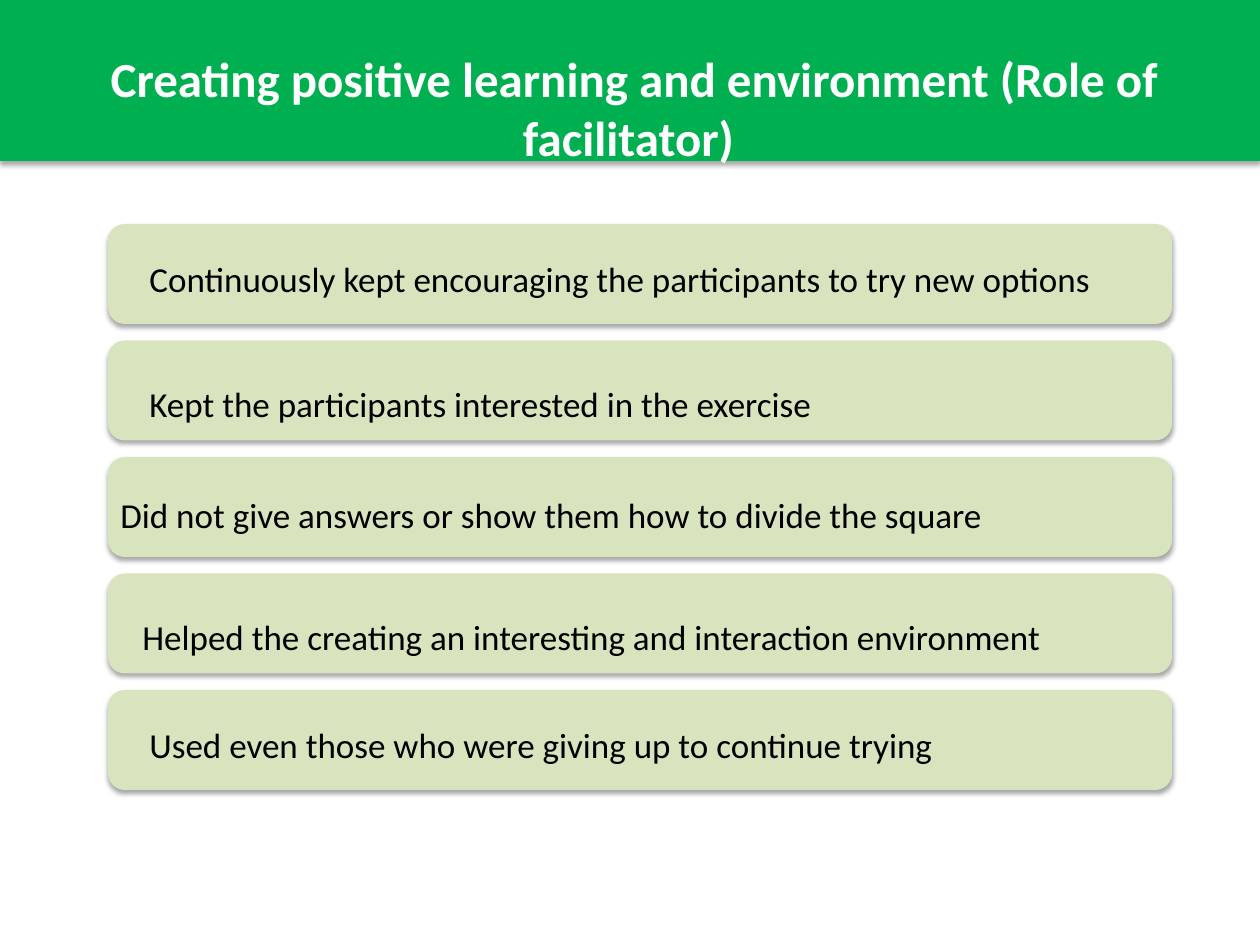
from dataclasses import dataclass

from lxml.etree import SubElement
from pptx import Presentation
from pptx.dml.color import RGBColor
from pptx.enum.shapes import MSO_SHAPE as Shape
from pptx.enum.text import MSO_ANCHOR as Anchor, MSO_AUTO_SIZE as AutoSize, PP_ALIGN as Align
from pptx.oxml.ns import qn
from pptx.util import Emu, Pt

TITLE = "Creating positive learning and environment (Role of facilitator) "
# wording, then left, top, width, height of its text in px, and line spacing
ROLES = [
    ("Continuously kept encouraging the participants to try new options",
     (137, 251, 1000, 55), 1.0),
    ("Kept the participants interested in the exercise", (137, 334, 919, 97), 2.0),
    ("Did not give answers or show them how to divide the square", (108, 445, 917, 97), 2.0),
    ("Helped the creating an interesting and interaction environment",
     (130, 567, 969, 97), 2.0),
    ("Used even those who were giving up to continue trying", (137, 675, 919, 97), 2.0),
]

SLIDE_W, SLIDE_H = 1260, 945
HEADER_H = 161
TITLE_BOX = (4, 42, SLIDE_W, 131)
BAR_LEFT, BAR_W, BAR_H = 108, 1064, 100
FIRST_BAR, LAST_BAR = 224, 690


@dataclass(frozen=True)
class Theme:
    header: RGBColor = RGBColor(0x00, 0xB0, 0x50)
    bar: RGBColor = RGBColor(0xD7, 0xE4, 0xBD)
    title: RGBColor = RGBColor(0xFF, 0xFF, 0xFF)
    text: RGBColor = RGBColor(0x00, 0x00, 0x00)
    font: str = "Calibri"
    title_size: Pt = Pt(28)
    text_size: Pt = Pt(20)


THEME = Theme()


def px(*lengths):
    return [Emu(round(length * 914400 / 126)) for length in lengths]


def add_soft_shadow(shape):
    shape.shadow.inherit = False
    effects = shape.element.spPr.find(qn("a:effectLst"))
    shadow = SubElement(effects, qn("a:outerShdw"), blurRad=str(Pt(3.1)),
                        dist=str(Pt(1.8)), dir="5400000", rotWithShape="0")
    black = SubElement(shadow, qn("a:srgbClr"), val="000000")
    SubElement(black, qn("a:alpha"), val="35000")


def add_panel(slide, kind, box, color):
    panel = slide.shapes.add_shape(kind, *px(*box))
    panel.fill.solid()
    panel.fill.fore_color.rgb = color
    panel.line.fill.background()
    add_soft_shadow(panel)
    return panel


def write(shape, wording, size, color, bold=False, align=Align.LEFT, spacing=1.0):
    frame = shape.text_frame
    frame.word_wrap = True
    frame.auto_size = AutoSize.SHAPE_TO_FIT_TEXT
    frame.vertical_anchor = Anchor.TOP
    frame.text = wording
    paragraph = frame.paragraphs[0]
    paragraph.alignment = align
    paragraph.line_spacing = spacing
    font = paragraph.font
    font.name, font.size, font.bold = THEME.font, size, bold
    font.color.rgb = color


def main():
    deck = Presentation()
    deck.slide_width, deck.slide_height = px(SLIDE_W, SLIDE_H)
    slide = deck.slides.add_slide(deck.slide_layouts[5])

    header = add_panel(slide, Shape.RECTANGLE, (0, 0, SLIDE_W, HEADER_H), THEME.header)
    title = slide.shapes.title
    title.element.addprevious(header.element)
    title.left, title.top, title.width, title.height = px(*TITLE_BOX)
    write(title, TITLE, THEME.title_size, THEME.title, bold=True, align=Align.CENTER)

    pitch = (LAST_BAR - FIRST_BAR) / (len(ROLES) - 1)
    for row, (role, text_box, spacing) in enumerate(ROLES):
        bar_box = (BAR_LEFT, FIRST_BAR + row * pitch, BAR_W, BAR_H)
        add_panel(slide, Shape.ROUNDED_RECTANGLE, bar_box, THEME.bar)
        label = slide.shapes.add_textbox(*px(*text_box))
        write(label, role, THEME.text_size, THEME.text, spacing=spacing)

    deck.save("out.pptx")


if __name__ == "__main__":
    main()
